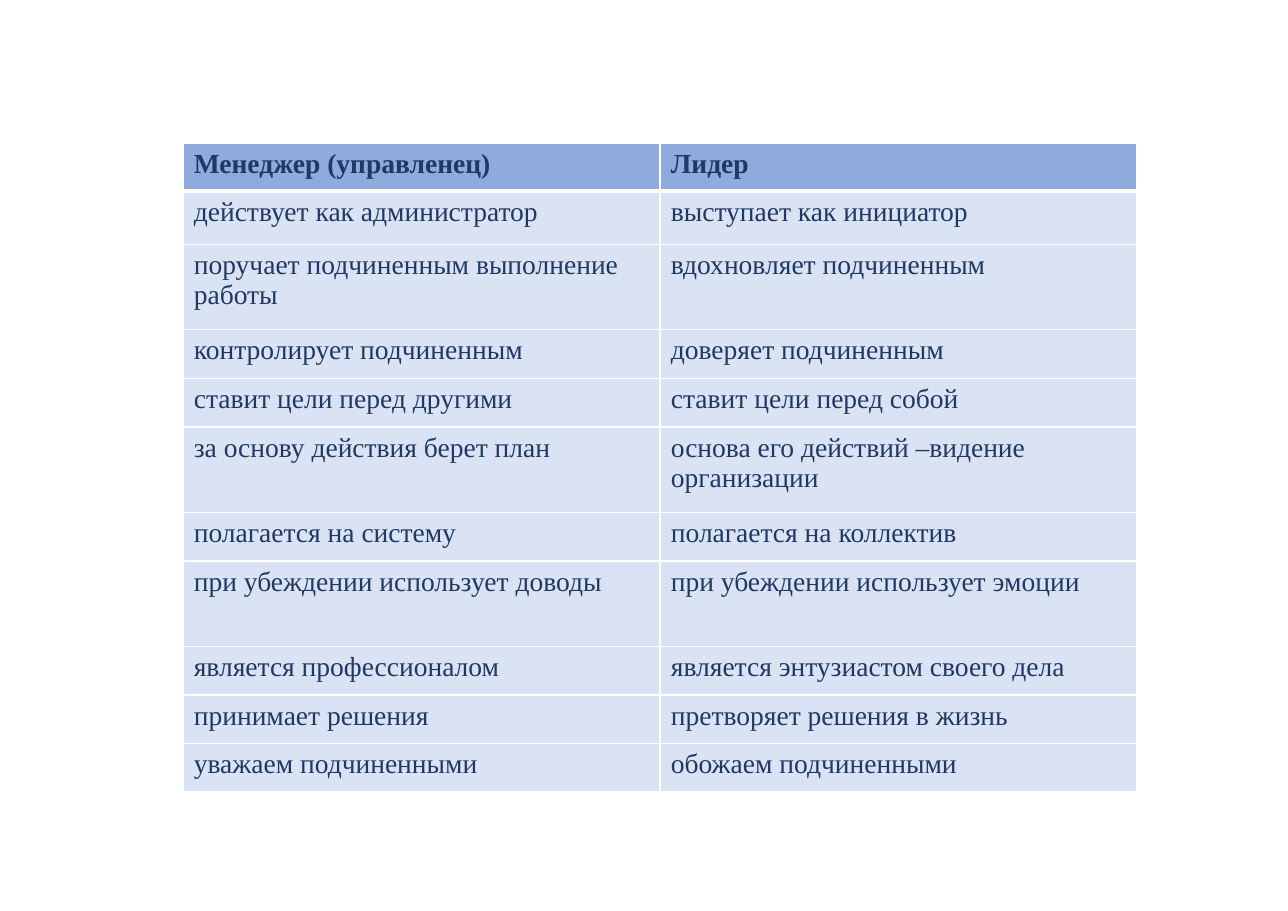
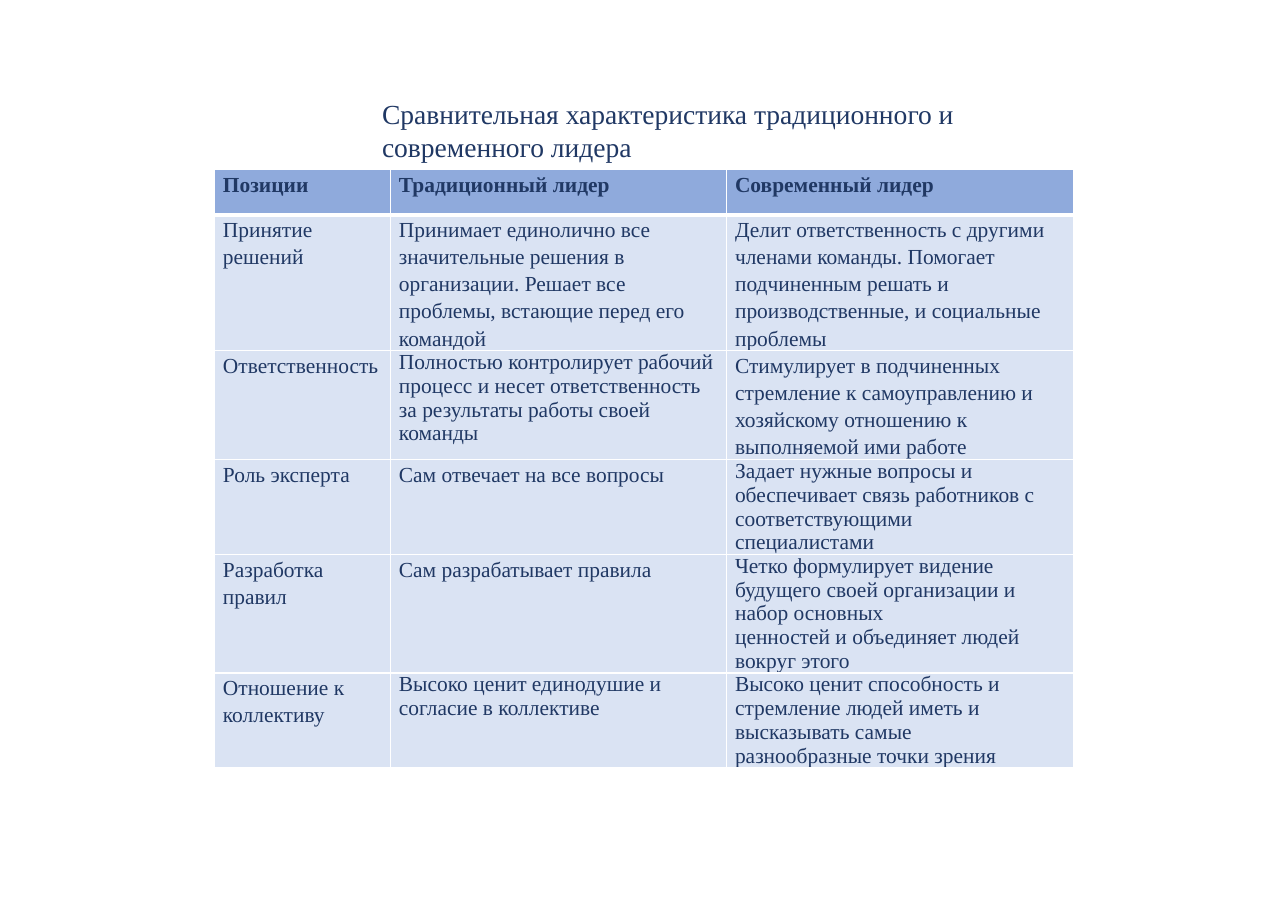
import pptx
import pptx.dml.color
import pptx.enum.text
import pptx.oxml
import pptx.oxml.ns
import pptx.util

Cm = pptx.util.Cm
Pt = pptx.util.Pt
RGBColor = pptx.dml.color.RGBColor

NAVY = RGBColor(0x20, 0x38, 0x64)
HEADER_BLUE = RGBColor(0x8F, 0xAA, 0xDC)
BODY_BLUE = RGBColor(0xDA, 0xE3, 0xF3)
WHITE = RGBColor(0xFF, 0xFF, 0xFF)
FONT = "Times New Roman"
THIN, THICK = Pt(1), Pt(3)

MANAGER_ROWS = [
    ("Менеджер (управленец)", "Лидер"),
    ("действует как администратор", "выступает как инициатор"),
    ("поручает подчиненным выполнение работы", "вдохновляет подчиненным"),
    ("контролирует подчиненным", "доверяет подчиненным"),
    ("ставит цели перед другими", "ставит цели перед собой"),
    ("за основу действия берет план", "основа его действий –видение организации"),
    ("полагается на систему", "полагается на коллектив"),
    ("при убеждении использует доводы", "при убеждении использует эмоции"),
    ("является профессионалом", "является энтузиастом своего дела"),
    ("принимает решения", "претворяет решения в жизнь"),
    ("уважаем подчиненными", "обожаем подчиненными"),
]
HEADER_H, FIRST_H, LINE_H, TALL_H = 1.1, 1.23, 1.12, 1.97
TALL_ROWS = {2, 5, 7}

LEADER_TITLE = "Сравнительная характеристика традиционного и современного лидера"
LEADER_ROWS = [
    ("Позиции", "Традиционный лидер", "Современный лидер"),
    ("Принятие решений",
     "Принимает единолично все значительные решения в организации. "
     "Решает все проблемы, встающие перед его командой",
     "Делит ответственность с другими членами команды. Помогает подчиненным "
     "решать и производственные, и социальные проблемы"),
    ("Ответственность",
     "Полностью контролирует рабочий процесс и несет ответственность "
     "за результаты работы своей команды",
     "Стимулирует в подчиненных стремление к самоуправлению и хозяйскому "
     "отношению к выполняемой ими работе"),
    ("Роль эксперта", "Сам отвечает на все вопросы",
     "Задает нужные вопросы и обеспечивает связь работников с соответствующими\n"
     "специалистами"),
    ("Разработка правил", "Сам разрабатывает правила",
     "Четко формулирует видение будущего своей организации и набор основных\n"
     "ценностей и объединяет людей вокруг этого"),
    ("Отношение к коллективу", "Высоко ценит единодушие и согласие в коллективе",
     "Высоко ценит способность и стремление людей иметь и высказывать самые\n"
     "разнообразные точки зрения"),
]
SINGLE_SPACED = {(2, 1), (3, 2), (4, 2), (5, 1), (5, 2)}


def style_text(tf, size, bold=False, spacing=None):
    """Apply the shared font to every run of a text frame."""
    for p in tf.paragraphs:
        if spacing:
            p.line_spacing = spacing
        for r in p.runs:
            r.font.name = FONT
            r.font.size = Pt(size)
            r.font.bold = bold
            r.font.color.rgb = NAVY


def set_borders(cell, top, bottom):
    """Draw white borders with the given top and bottom widths."""
    tc_pr = cell._tc.get_or_add_tcPr()
    ns = pptx.oxml.ns.nsdecls("a")
    for side, width in (("L", THIN), ("R", THIN), ("T", top), ("B", bottom)):
        tc_pr.append(pptx.oxml.parse_xml(
            f'<a:ln{side} {ns} w="{width}"><a:solidFill>'
            f'<a:srgbClr val="{WHITE}"/></a:solidFill></a:ln{side}>'))


def add_comparison(s, box, rows, widths, heights, size, margins, spacing):
    """Place a table with a header row; spacing(row, col) gives line spacing."""
    table = s.shapes.add_table(len(rows), len(widths), *map(Cm, box)).table
    table.horz_banding = False
    for column, width in zip(table.columns, widths):
        column.width = Cm(width)
    for i, (row, height) in enumerate(zip(rows, heights)):
        table.rows[i].height = Cm(height)
        for j, text in enumerate(row):
            cell = table.cell(i, j)
            cell.margin_left = cell.margin_right = Cm(margins[0])
            cell.margin_top = cell.margin_bottom = Cm(margins[1])
            cell.text_frame.text = text
            style_text(cell.text_frame, size, i == 0, spacing(i, j))
            set_borders(cell, THICK if i == 1 else THIN, THICK if i == 0 else THIN)
            cell.fill.solid()
            cell.fill.fore_color.rgb = BODY_BLUE if i else HEADER_BLUE


def add_title(s, box, text):
    """Place the heading above a table."""
    tf = s.shapes.add_textbox(*map(Cm, box)).text_frame
    tf.word_wrap = True
    tf.auto_size = pptx.enum.text.MSO_AUTO_SIZE.SHAPE_TO_FIT_TEXT
    tf.text = text
    style_text(tf, 18)


def manager_slide(s, left, top):
    """Compare the manager with the leader."""
    widths = [11, 11]
    heights = [HEADER_H, FIRST_H] + [
        TALL_H if i in TALL_ROWS else LINE_H for i in range(2, len(MANAGER_ROWS))]
    add_comparison(s, (left, top, sum(widths), sum(heights)), MANAGER_ROWS,
                   widths, heights, 18, (0.25, 0.13), lambda i, j: None)


def leader_slide(s, left, top):
    """Compare the traditional leader with the modern one, under a title."""
    widths = [4.06, 7.75, 8]
    heights = [1.04] * len(LEADER_ROWS)
    add_comparison(s, (left, top, sum(widths), sum(heights)), LEADER_ROWS,
                   widths, heights, 14, (0.19, 0),
                   lambda i, j: None if (i, j) in SINGLE_SPACED else 1.15)
    add_title(s, (left + 3.61, top - 1.8, 14.83, 1.8), LEADER_TITLE)


def main():
    """Build and save the presentation."""
    prs = pptx.Presentation()
    prs.slide_width, prs.slide_height = Cm(29.7), Cm(21)
    blank = prs.slide_layouts[6]
    manager_slide(prs.slides.add_slide(blank), 4.22, 3.3)
    leader_slide(prs.slides.add_slide(blank), 4.95, 3.91)
    prs.save("out.pptx")


if __name__ == "__main__":
    main()
